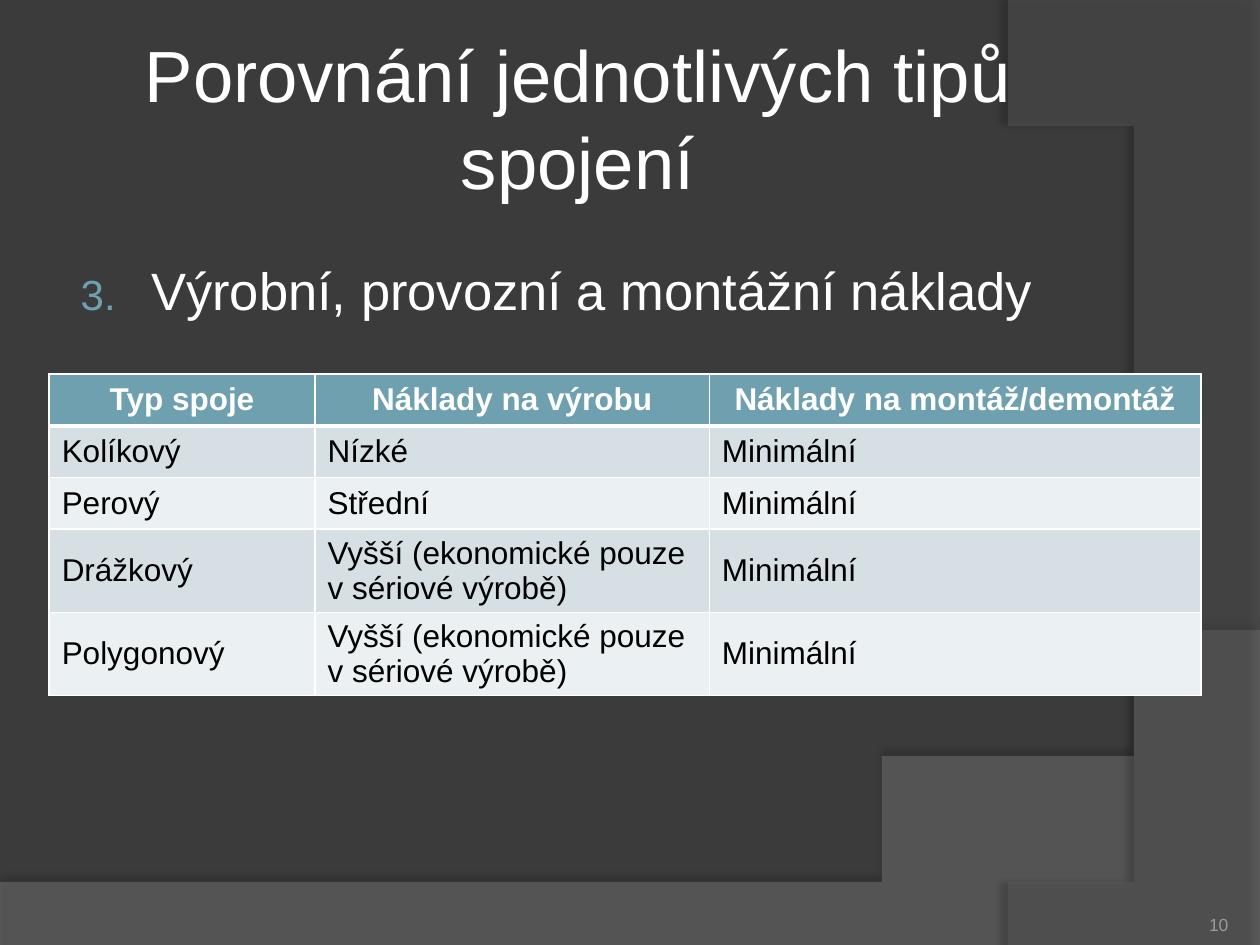
"""Build the slide comparing the costs of shaft joint types."""
from lxml import etree
from pptx import Presentation
from pptx.dml.color import RGBColor
from pptx.enum.text import MSO_ANCHOR, MSO_AUTO_SIZE, PP_ALIGN
from pptx.oxml.ns import qn
from pptx.util import Inches, Pt

MIDDLE, BOTTOM, TOP = MSO_ANCHOR.MIDDLE, MSO_ANCHOR.BOTTOM, MSO_ANCHOR.TOP
LEFT, CENTER, RIGHT, JUSTIFY = PP_ALIGN.LEFT, PP_ALIGN.CENTER, PP_ALIGN.RIGHT, PP_ALIGN.JUSTIFY
NO_AUTOFIT = MSO_AUTO_SIZE.NONE
FONT = "Arial"
BACKGROUND = RGBColor(0x3B, 0x3B, 0x3B)
LOWER_WAVE = RGBColor(0x7F, 0x7F, 0x7F)
RIGHT_WAVE = RGBColor(0x5E, 0x5E, 0x5E)
WHITE = RGBColor(0xFF, 0xFF, 0xFF)
BLACK = RGBColor(0, 0, 0)
ACCENT = RGBColor(0x6E, 0xA0, 0xB0)
BANDS = RGBColor(0xD5, 0xDF, 0xE4), RGBColor(0xEB, 0xF0, 0xF2)
NUMBER_GRAY = RGBColor(0x9D, 0x9B, 0x9A)

SERIES_COST = "Vyšší (ekonomické pouze v sériové výrobě)"
ROWS = [
    ("Typ spoje", "Náklady na výrobu", "Náklady na montáž/demontáž"),
    ("Kolíkový", "Nízké", "Minimální"),
    ("Perový", "Střední", "Minimální"),
    ("Drážkový", SERIES_COST, "Minimální"),
    ("Polygonový", SERIES_COST, "Minimální"),
]
COLUMN_WIDTHS = (2.11, 3.13, 3.9)
ROW_HEIGHTS = (0.41, 0.41, 0.41, 0.66, 0.66)


def add_element(parent, tag, **attributes):
    """Append a DrawingML element and return it."""
    element = etree.SubElement(parent, qn(tag))
    for name, value in attributes.items():
        element.set(name, str(value))
    return element


def add_color(parent, color, opacity=100):
    """Append a colour with the given opacity in percent."""
    element = add_element(parent, "a:srgbClr", val=color)
    if opacity < 100:
        add_element(element, "a:alpha", val=opacity * 1000)


def curve_points(start, first, second, end, steps=60):
    """Return points along a cubic Bezier curve."""
    points = []
    for step in range(steps + 1):
        t = step / steps
        weights = ((1 - t) ** 3, 3 * t * (1 - t) ** 2, 3 * t * t * (1 - t), t ** 3)
        corners = (start, first, second, end)
        points.append(tuple(sum(w * c[axis] for w, c in zip(weights, corners)) for axis in (0, 1)))
    return points


def add_wave(page, points, color, opacity, shadow):
    """Add a translucent backdrop outline behind all other shapes."""
    builder = page.shapes.build_freeform(*points[0], scale=Inches(1))
    builder.add_line_segments(points[1:], close=True)
    wave = builder.convert_to_shape()
    wave.fill.solid()
    wave.fill.fore_color.rgb = color
    add_element(wave.fill._xPr.find(qn("a:solidFill"))[0], "a:alpha", val=opacity * 1000)
    wave.line.fill.background()
    shadow_opacity, blur, distance, angle = shadow
    effects = add_element(wave._element.spPr, "a:effectLst")
    outer = add_element(effects, "a:outerShdw", blurRad=Pt(blur), dist=Pt(distance),
                        dir=angle * 60000, algn="ctr", rotWithShape=0)
    add_color(outer, BLACK, shadow_opacity)
    tree = page.shapes._spTree
    tree.remove(wave._element)
    return wave._element


def write(frame, text, size, color, align, bold=False):
    """Write one formatted run and return its paragraph."""
    para = frame.paragraphs[0]
    para.alignment = align
    span = para.add_run()
    span.text = text
    span.font.name = FONT
    span.font.size = Pt(size)
    span.font.bold = bold
    span.font.color.rgb = color
    return para


def place(box, left, top, width, height, anchor, inset=None):
    """Position a text shape and return its prepared text frame."""
    box.left, box.top = Inches(left), Inches(top)
    box.width, box.height = Inches(width), Inches(height)
    frame = box.text_frame
    frame.word_wrap = True
    frame.auto_size = NO_AUTOFIT
    frame.vertical_anchor = anchor
    if inset is not None:
        frame.margin_left = frame.margin_right = Inches(inset)
        frame.margin_top = frame.margin_bottom = Inches(inset)
    return frame


def number_paragraph(para, start):
    """Give a paragraph a coloured automatic number."""
    properties = para._p.get_or_add_pPr()
    properties.set("marL", str(Inches(0.6)))
    properties.set("indent", str(Inches(-0.56)))
    add_color(add_element(properties, "a:buClr"), ACCENT)
    add_element(properties, "a:buSzPct", val=80000)
    add_element(properties, "a:buFont", typeface=FONT)
    add_element(properties, "a:buAutoNum", type="arabicPeriod", startAt=start)


def add_borders(cell, top, bottom):
    """Draw white cell borders with the given top and bottom widths."""
    properties = cell._tc.get_or_add_tcPr()
    for tag, width in (("a:lnL", 1), ("a:lnR", 1), ("a:lnT", top), ("a:lnB", bottom)):
        line = add_element(properties, tag, w=Pt(width))
        add_color(add_element(line, "a:solidFill"), WHITE)


def add_cost_table(page):
    """Add the banded table of joint costs."""
    frame = page.shapes.add_table(len(ROWS), len(COLUMN_WIDTHS), Inches(0.39), Inches(2.97),
                                  Inches(sum(COLUMN_WIDTHS)), Inches(sum(ROW_HEIGHTS)))
    table = frame.table
    for column, width in zip(table.columns, COLUMN_WIDTHS):
        column.width = Inches(width)
    for index, (texts, height) in enumerate(zip(ROWS, ROW_HEIGHTS)):
        table.rows[index].height = Inches(height)
        header = index == 0
        for cell, text in zip(table.rows[index].cells, texts):
            add_borders(cell, 3 if index == 1 else 1, 3 if header else 1)
            cell.fill.solid()
            cell.fill.fore_color.rgb = ACCENT if header else BANDS[(index - 1) % 2]
            cell.vertical_anchor = MIDDLE
            write(cell.text_frame, text, 18, WHITE if header else BLACK,
                  CENTER if header else LEFT, header)


def add_backdrop(page):
    """Fill the background and lay both waves behind the content."""
    page.background.fill.solid()
    page.background.fill.fore_color.rgb = BACKGROUND
    lower = [(0, 7.5), (10, 7.5)] + curve_points((10, 5.2), (5.59, 7.29), (3.91, 7.19), (0, 7.05))
    right = [(10, 0.02), (10, 7.5)] + curve_points((8.21, 7.5), (9.35, 6.19), (10.18, 3), (8, 0))
    waves = [
        add_wave(page, lower, LOWER_WAVE, 45, (35, 4, 3.5, 270)),
        add_wave(page, right, RIGHT_WAVE, 40, (45, 4, 4, 180)),
    ]
    for offset, wave in enumerate(waves):
        page.shapes._spTree.insert(2 + offset, wave)


def main():
    """Build and save the slide."""
    deck = Presentation()
    deck.slide_width, deck.slide_height = Inches(10), Inches(7.5)
    page = deck.slides.add_slide(deck.slide_layouts[1])
    add_backdrop(page)
    title = place(page.shapes.title, 0.5, 0.3, 8.17, 1.25, MIDDLE, 0.05)
    write(title, "Porovnání jednotlivých tipů spojení", 41.4, WHITE, CENTER)
    body = place(page.placeholders[1], 0.5, 1.75, 8.17, 4.95, TOP)
    number_paragraph(body.paragraphs[0], 3)
    topic = write(body, "Výrobní, provozní a montážní náklady", 30, WHITE, JUSTIFY)
    topic.line_spacing = 1.5
    topic.space_before = Pt(0)
    number_box = page.shapes.add_textbox(0, 0, 0, 0)
    number = place(number_box, 8.92, 7.02, 0.83, 0.4, BOTTOM, 0)
    write(number, "10", 10, NUMBER_GRAY, RIGHT)
    add_cost_table(page)
    deck.save("out.pptx")


if __name__ == "__main__":
    main()
